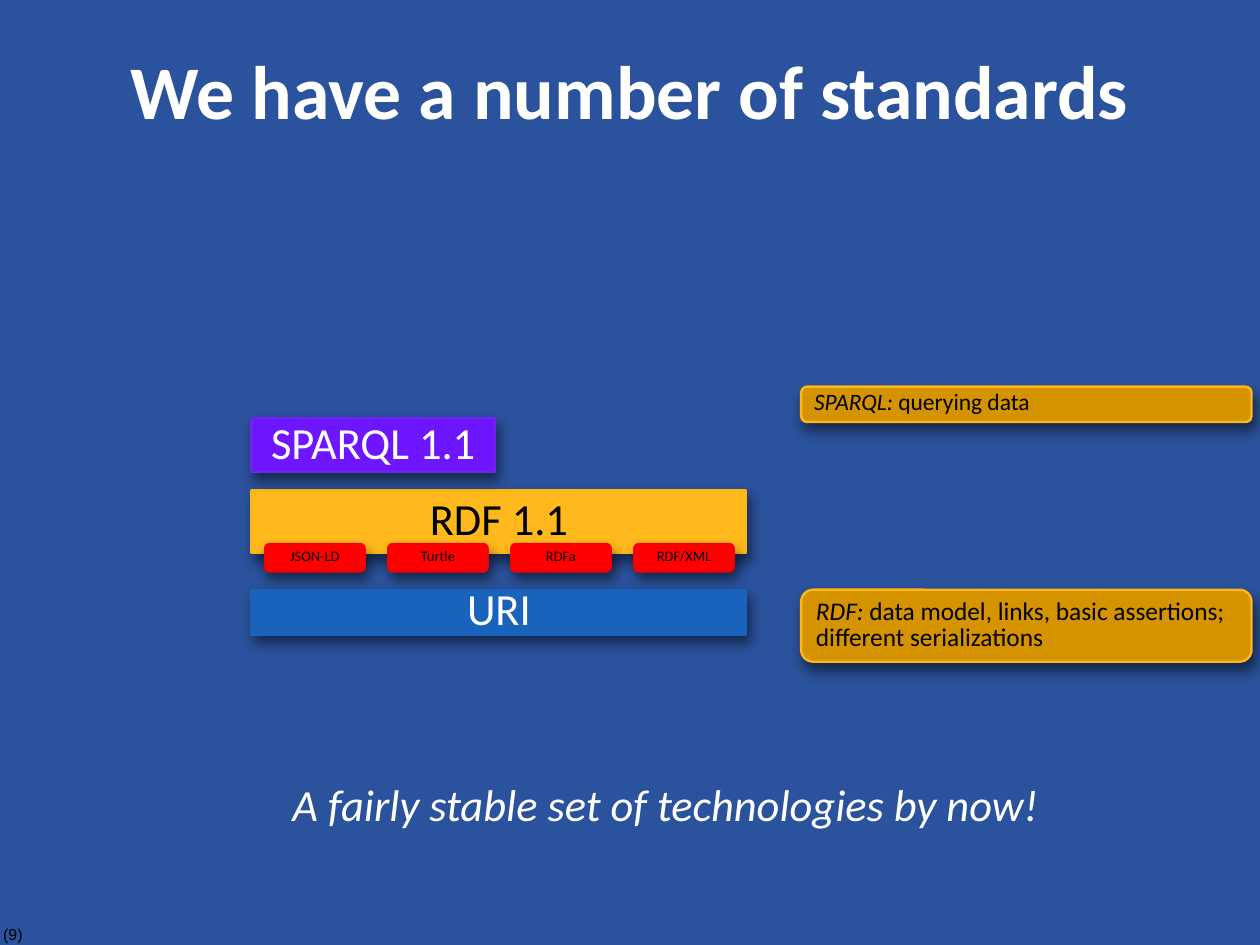
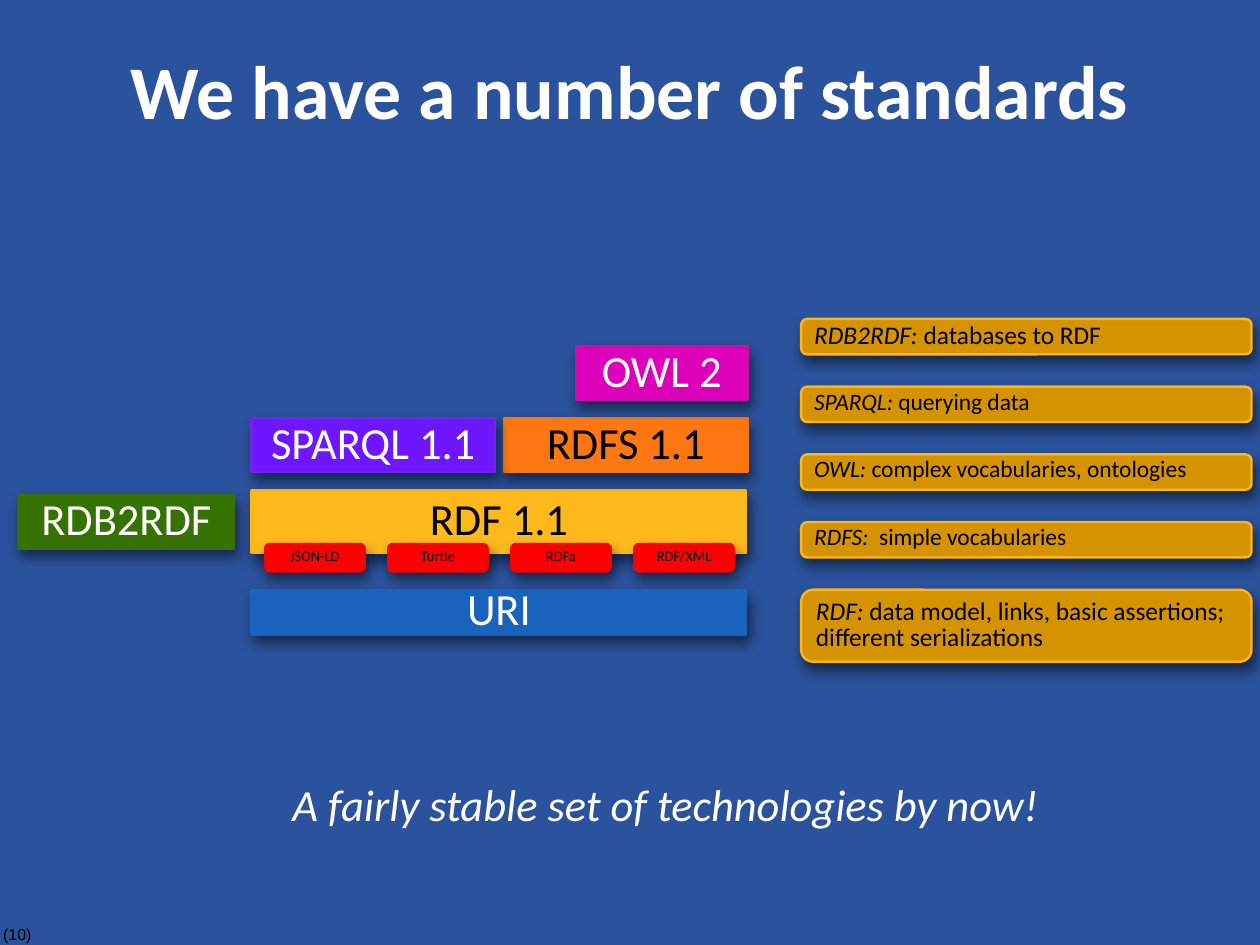
from dataclasses import dataclass

from lxml.etree import SubElement
from pptx import Presentation
from pptx.dml.color import RGBColor
from pptx.enum.shapes import MSO_SHAPE
from pptx.enum.text import MSO_ANCHOR, MSO_AUTO_SIZE, PP_ALIGN
from pptx.oxml.ns import qn
from pptx.util import Cm, Inches, Pt


@dataclass(frozen=True)
class Theme:
    font: str = "Calibri"
    number_font: str = "Arial"
    background: str = "2B529C"
    light: str = "FFFFFF"
    dark: str = "000000"
    chip_fill: str = "FF0000"
    chip_line: str = "F90000"
    note_fill: str = "D59300"
    note_line: str = "FFB717"
    title_size: float = 47.7
    block_size: float = 28
    chip_size: float = 9.1
    note_size: float = 16
    small_note_size: float = 14.8
    number_size: float = 10
    spacing: float = 0.87
    tight_spacing: float = 0.67
    line_width: float = 1.5


T = Theme()

# name: (left, top, width, height), fill, line, text colour
BLOCKS = {
    "RDB2RDF": ((0.16, 4.33, 1.89, 0.47), "367202", "367202", T.light),
    "RDF 1.1": ((2.2, 4.29, 4.33, 0.55), "FFB91D", "FFB717", T.dark),
    "RDFS 1.1": ((4.41, 3.66, 2.13, 0.47), "FF7711", "F97511", T.dark),
    "SPARQL 1.1": ((2.2, 3.66, 2.13, 0.47), "6E16FF", "6F25EA", T.light),
    "OWL 2": ((5.04, 3.03, 1.5, 0.47), "DC00BA", "C90EAC", T.light),
    "URI": ((2.2, 5.16, 4.33, 0.39), "1963BC", "1963BC", T.light),
}
SERIALIZATIONS = ["JSON-LD", "Turtle", "RDFa", "RDF/XML"]
CHIP_PITCH = (5.55 - 2.32) / (len(SERIALIZATIONS) - 1)
# Notes from the bottom row up: (term, lines, height, size, line spacing)
NOTES = [
    ("RDF:", [" data model, links, basic assertions;", "different serializations"],
     0.63, T.note_size, T.spacing),
    ("RDFS:", ["  simple vocabularies"], 0.31, T.small_note_size, T.tight_spacing),
    ("OWL: ", ["complex vocabularies, ontologies"], 0.31, T.small_note_size, T.tight_spacing),
    ("SPARQL:", [" querying data"], 0.31, T.small_note_size, T.tight_spacing),
    ("RDB2RDF:", [" databases to RDF"], 0.31, T.note_size, T.spacing),
]
NOTE_PITCH = (5.16 - 2.79) / (len(NOTES) - 1)
SLIDES = [
    (9, ["URI", "RDF 1.1", "SPARQL 1.1"], ["RDF:", "SPARQL:"]),
    (10, list(BLOCKS), [note[0] for note in NOTES]),
]


def rgb(color):
    return RGBColor.from_string(color)


def format_run(r, size, color, font=T.font, bold=False, italic=False):
    r.font.name = font
    r.font.size = Pt(size)
    r.font.color.rgb = rgb(color)
    r.font.bold = bold
    r.font.italic = italic


def add_shadow(sp):
    """Soft black shadow falling below and slightly to the right."""
    sp.shadow.inherit = False
    effects = sp.element.spPr.find(qn("a:effectLst"))
    shadow = SubElement(effects, qn("a:outerShdw"), blurRad=str(Pt(8)),
                        dist=str(Pt(5)), dir=str(70 * 60000), rotWithShape="0")
    color = SubElement(shadow, qn("a:srgbClr"), val=T.dark)
    SubElement(color, qn("a:alpha"), val="50000")


def add_box(s, kind, box, fill, line):
    sp = s.shapes.add_shape(kind, *map(Inches, box))
    sp.fill.solid()
    sp.fill.fore_color.rgb = rgb(fill)
    sp.line.color.rgb = rgb(line)
    sp.line.width = Pt(T.line_width)
    add_shadow(sp)
    sp.text_frame.word_wrap = True
    sp.text_frame.vertical_anchor = MSO_ANCHOR.MIDDLE
    return sp


def set_line(tf, text, align, spacing, size, color, **style):
    p = tf.paragraphs[0]
    p.text = text
    p.alignment = align
    p.line_spacing = spacing
    format_run(p.runs[0], size, color, **style)


def add_text(s, box, text, align, size, color, **style):
    tf = s.shapes.add_textbox(*map(Inches, box)).text_frame
    tf.word_wrap = True
    set_line(tf, text, align, T.spacing, size, color, **style)


def add_title(s, text):
    sp = s.shapes.title
    sp.left, sp.top, sp.width, sp.height = map(Inches, (0.55, 0.09, 9.92, 1.38))
    tf = sp.text_frame
    tf.auto_size = MSO_AUTO_SIZE.NONE
    tf.vertical_anchor = MSO_ANCHOR.MIDDLE
    tf.margin_left = tf.margin_right = Inches(0.11)
    tf.margin_top = tf.margin_bottom = Inches(0.06)
    set_line(tf, text, PP_ALIGN.CENTER, 1.0, T.title_size, T.light, bold=True)


def add_block(s, name):
    box, fill, line, color = BLOCKS[name]
    sp = add_box(s, MSO_SHAPE.RECTANGLE, box, fill, line)
    set_line(sp.text_frame, name, PP_ALIGN.CENTER, T.spacing, T.block_size, color)


def add_serializations(s):
    for i, name in enumerate(SERIALIZATIONS):
        sp = add_box(s, MSO_SHAPE.ROUNDED_RECTANGLE,
                     (2.32 + CHIP_PITCH * i, 4.76, 0.87, 0.24), T.chip_fill, T.chip_line)
        set_line(sp.text_frame, name, PP_ALIGN.CENTER, T.tight_spacing, T.chip_size, T.dark)


def add_note(s, row, term, lines, height, size, spacing):
    """Explanation that opens with its term in italics."""
    sp = add_box(s, MSO_SHAPE.ROUNDED_RECTANGLE,
                 (7.01, 5.16 - NOTE_PITCH * row, 3.94, height), T.note_fill, T.note_line)
    tf = sp.text_frame
    tf.text = "\n".join([term] + lines[1:])
    tf.paragraphs[0].add_run().text = lines[0]
    for p in tf.paragraphs:
        p.alignment = PP_ALIGN.LEFT
        p.line_spacing = spacing
        for r in p.runs:
            format_run(r, size, T.dark, italic=r.text == term)


def add_standards_slide(prs, number, blocks, terms):
    s = prs.slides.add_slide(prs.slide_layouts.get_by_name("Title Only"))
    add_text(s, (-0.07, 8.06, 0.47, 0.25), f"({number})", PP_ALIGN.LEFT,
             T.number_size, T.dark, font=T.number_font)
    add_title(s, "We have a number of standards")
    for name in blocks:
        add_block(s, name)
    add_serializations(s)
    for row, note in enumerate(NOTES):
        if note[0] in terms:
            add_note(s, row, *note)
    add_text(s, (1.57, 6.81, 8.5, 0.52), "A fairly stable set of technologies by now!",
             PP_ALIGN.CENTER, T.block_size, T.light, italic=True)


def main():
    prs = Presentation()
    prs.slide_width, prs.slide_height = Cm(28), Cm(21)
    fill = prs.slide_master.background.fill
    fill.solid()
    fill.fore_color.rgb = rgb(T.background)
    for number, blocks, terms in SLIDES:
        add_standards_slide(prs, number, blocks, terms)
    prs.save("out.pptx")


if __name__ == "__main__":
    main()
